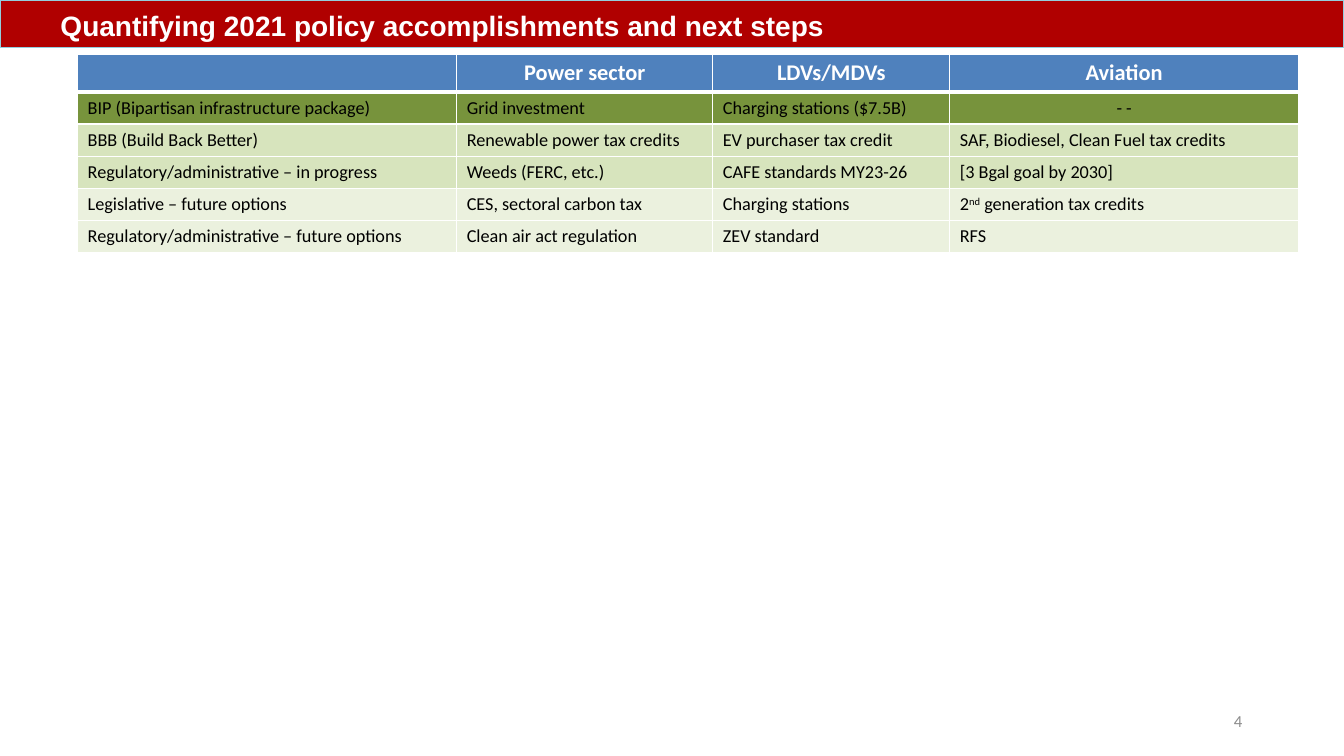
import lxml.etree
import pptx
import pptx.dml.color
import pptx.enum.text
import pptx.oxml.ns
import pptx.util
from pptx.util import Inches

ALIGN = pptx.enum.text.PP_ALIGN
ANCHOR = pptx.enum.text.MSO_ANCHOR
WHITE = "FFFFFF"
HEADER_FILL = "4F81BD"
COLUMN_WIDTHS = [3.76, 2.54, 2.35, 3.46]
HEADERS = ["", "Power sector", "LDVs/MDVs", "Aviation"]
POLICIES = [
    ("77933C", ["BIP (Bipartisan infrastructure package)", "Grid investment",
                "Charging stations ($7.5B)", "- -"]),
    ("D7E4BD", ["BBB (Build Back Better)", "Renewable power tax credits",
                "EV purchaser tax credit", "SAF, Biodiesel, Clean Fuel tax credits"]),
    ("D7E4BD", ["Regulatory/administrative – in progress", "Weeds (FERC, etc.)",
                "CAFE standards MY23-26", "[3 Bgal goal by 2030]"]),
    ("EBF1DE", ["Legislative – future options", "CES, sectoral carbon tax",
                "Charging stations", ["2", "nd", " generation tax credits"]]),
    ("EBF1DE", ["Regulatory/administrative – future options",
                "Clean air act regulation", "ZEV standard", "RFS"]),
]


def colour(value):
    return pptx.dml.color.RGBColor.from_string(value)


def format_span(span, font, size, value, bold=False):
    span.font.name = font
    span.font.size = pptx.util.Pt(size)
    span.font.color.rgb = colour(value)
    span.font.bold = bold


def add_banner(page, text):
    banner = page.shapes.title
    banner.left, banner.top = 0, 0
    banner.width, banner.height = Inches(13.33), Inches(0.47)
    banner.fill.solid()
    banner.fill.fore_color.rgb = colour("B00000")
    banner.line.color.rgb = colour("93CDDD")
    banner.line.width = 0
    frame = banner.text_frame
    frame.text = text
    frame.auto_size = pptx.enum.text.MSO_AUTO_SIZE.NONE
    frame.vertical_anchor = ANCHOR.BOTTOM
    frame.margin_left = Inches(0.6)
    para = frame.paragraphs[0]
    para.alignment = ALIGN.LEFT
    format_span(para.runs[0], "Arial", 20, WHITE, True)


def add_page_number(page, number):
    box = page.shapes.add_textbox(Inches(9.42), Inches(6.95), Inches(3), Inches(0.4))
    frame = box.text_frame
    frame.word_wrap = True
    frame.vertical_anchor = ANCHOR.MIDDLE
    frame.text = number
    para = frame.paragraphs[0]
    para.alignment = ALIGN.RIGHT
    format_span(para.runs[0], "Calibri", 12, "8C8C8C")


def add_borders(cell, top, bottom):
    properties = cell._tc.get_or_add_tcPr()
    for side, points in (("L", 1), ("R", 1), ("T", top), ("B", bottom)):
        line = lxml.etree.SubElement(properties, pptx.oxml.ns.qn(f"a:ln{side}"),
                                     w=str(pptx.util.Pt(points)))
        fill = lxml.etree.SubElement(line, pptx.oxml.ns.qn("a:solidFill"))
        lxml.etree.SubElement(fill, pptx.oxml.ns.qn("a:srgbClr"), val=WHITE)


def fill_cell(cell, content, fill, row):
    header = row == 0
    size = 16 if header else 13
    add_borders(cell, 3 if row == 1 else 1, 3 if header else 1)
    cell.fill.solid()
    cell.fill.fore_color.rgb = colour(fill)
    para = cell.text_frame.paragraphs[0]
    para.alignment = ALIGN.CENTER if header or content == "- -" else ALIGN.LEFT
    if not content:
        lxml.etree.SubElement(para._p, pptx.oxml.ns.qn("a:endParaRPr"), sz=str(size * 100))
        return
    parts = [content] if isinstance(content, str) else content
    for part in parts:
        span = para.add_run()
        span.text = part
        format_span(span, "Calibri", size, WHITE if header else "000000", header)
        if part == "nd":
            span.font._element.set("baseline", "30000")


def add_policy_table(page):
    rows = [(HEADER_FILL, HEADERS)] + POLICIES
    frame = page.shapes.add_table(len(rows), len(HEADERS), Inches(0.77), Inches(0.54),
                                  Inches(sum(COLUMN_WIDTHS)), Inches(1.97))
    table = frame.table
    for column, width in zip(table.columns, COLUMN_WIDTHS):
        column.width = Inches(width)
    for row, (fill, contents) in enumerate(rows):
        table.rows[row].height = Inches(0.32 if row else 0.37)
        for column, content in enumerate(contents):
            fill_cell(table.cell(row, column), content, fill, row)


def main():
    deck = pptx.Presentation()
    deck.slide_width, deck.slide_height = Inches(13.33), Inches(7.5)
    page = deck.slides.add_slide(deck.slide_layouts[5])
    add_banner(page, "Quantifying 2021 policy accomplishments and next steps")
    add_page_number(page, "4")
    add_policy_table(page)
    deck.save("out.pptx")


if __name__ == "__main__":
    main()
